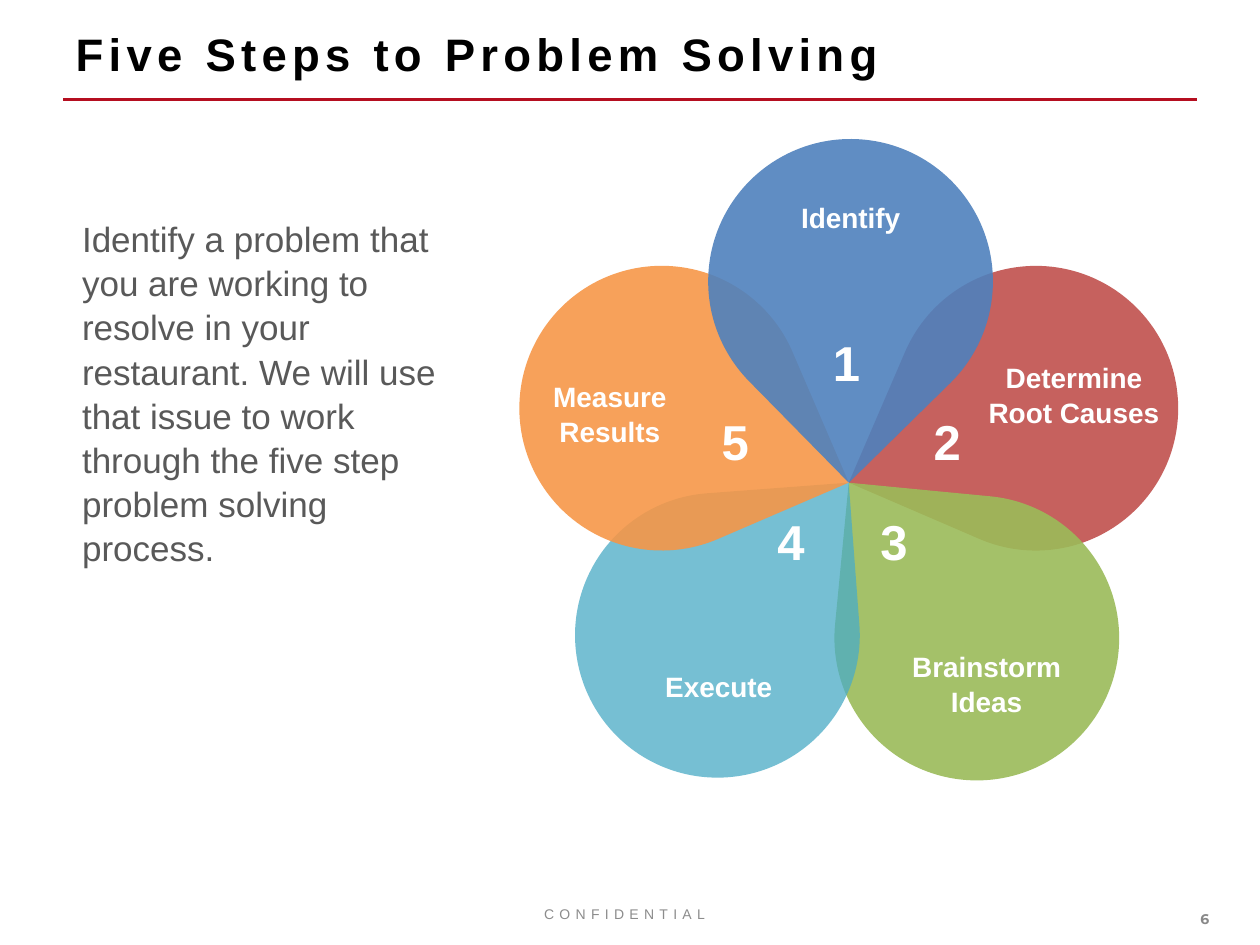
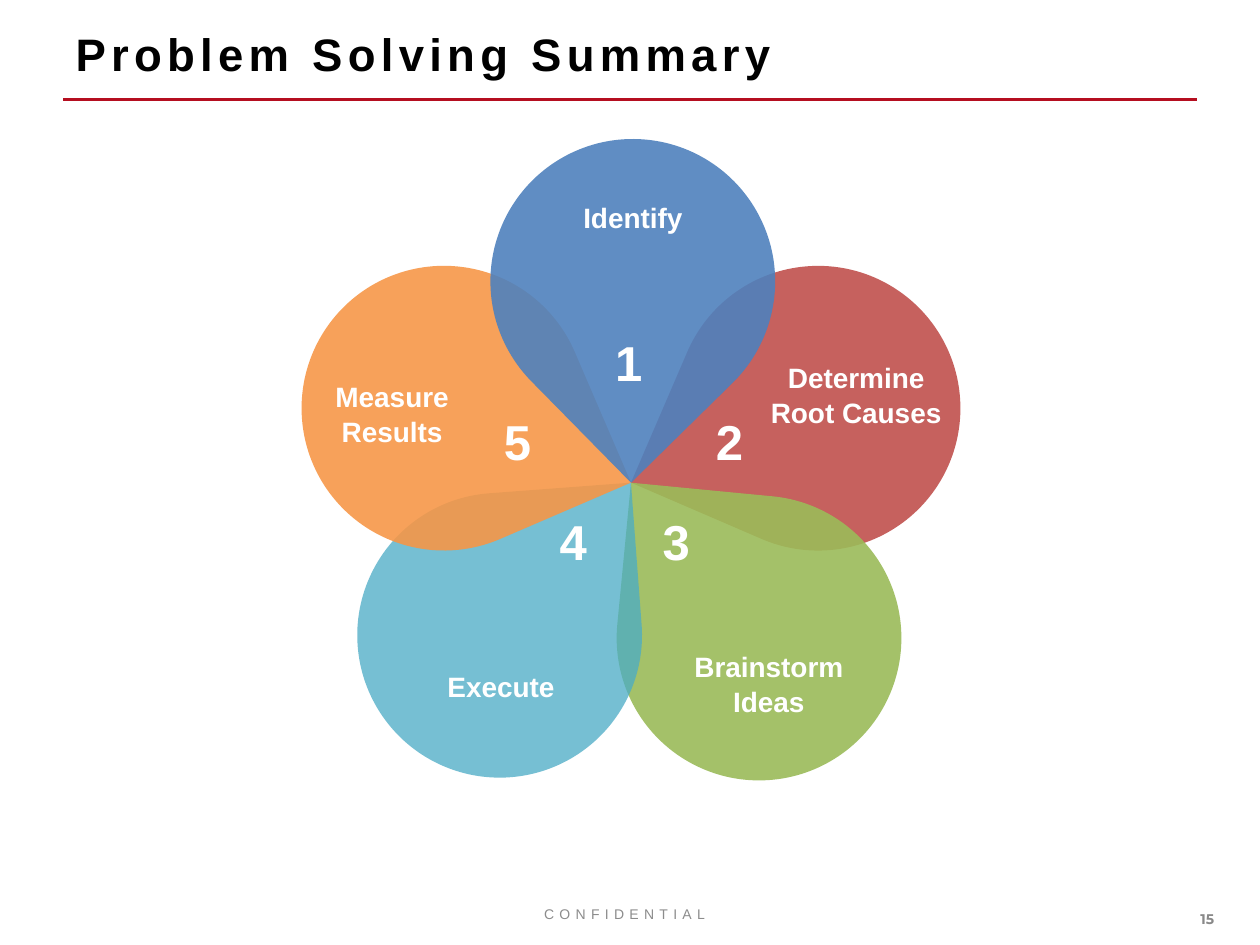
from dataclasses import dataclass
from math import cos, radians, sin, sqrt

from lxml.etree import SubElement
from pptx import Presentation
from pptx.dml.color import RGBColor
from pptx.enum.shapes import MSO_CONNECTOR, MSO_SHAPE
from pptx.enum.text import MSO_ANCHOR, MSO_AUTO_SIZE, PP_ALIGN
from pptx.oxml.ns import qn
from pptx.util import Cm, Pt


@dataclass(frozen=True)
class TextStyle:
    size: float
    color: str
    bold: bool = False
    font: str = "Arial"
    spacing: float = 0


@dataclass(frozen=True)
class Theme:
    title: TextStyle = TextStyle(26, "000000", bold=True, spacing=3)
    body: TextStyle = TextStyle(20, "595959")
    step: TextStyle = TextStyle(16, "FFFFFF", bold=True)
    number: TextStyle = TextStyle(28, "FFFFFF", bold=True)
    footer: TextStyle = TextStyle(8, "8C8C8C", spacing=3)
    page: TextStyle = TextStyle(8, "898989", bold=True, font="Montserrat")
    rule: str = "B50E20"
    rule_width: float = 2
    line_spacing: float = 1.05


@dataclass(frozen=True)
class Step:
    """One petal; places are centimetres from the flower's top left corner."""
    number: int
    name: str
    color: str
    opacity: int
    tip_angle: float  # clockwise from straight up
    name_box: tuple
    number_at: tuple


THEME = Theme()
TITLE_AND_BODY, TITLE_ONLY = 1, 5
HUB = (6.62, 6.91)
PETAL = 5.74
NUMBER_SIZE = (1.27, 1.45)
FLOWER_TOP = 2.82

# Listed from the rearmost petal to the foremost
STEPS = [
    Step(2, "Determine Root Causes", "C0504D", 90, 248.3,
         (9.19, 4.29, 3.94, 2.67), (8.08, 5.36)),
    Step(3, "Brainstorm Ideas", "9BBB59", 90, 320.5,
         (7.29, 10.11, 4.22, 1.93), (7.01, 7.37)),
    Step(4, "Execute", "4BACC6", 76, 40.7,
         (2.26, 10.52, 3.48, 1.12), (4.93, 7.37)),
    Step(5, "Measure Results", "F79646", 89, 111.7,
         (-0.05, 4.67, 3.71, 1.88), (3.81, 5.36)),
    Step(1, "Identify", "4F81BD", 90, 180.5,
         (5.11, 1.07, 3.1, 1.12), (6.05, 3.76)),
]


def write(frame, text, style, align=PP_ALIGN.LEFT, anchor=MSO_ANCHOR.TOP):
    frame.word_wrap = True
    frame.auto_size = MSO_AUTO_SIZE.NONE
    frame.vertical_anchor = anchor
    paragraph = frame.paragraphs[0]
    paragraph.alignment = align
    paragraph.space_before = Pt(0)
    run = paragraph.add_run()
    run.text = text
    run.font.name = style.font
    run.font.size = Pt(style.size)
    run.font.bold = style.bold
    run.font.color.rgb = RGBColor.from_string(style.color)
    if style.spacing:
        run.font._element.set("spc", str(round(style.spacing * 100)))
    return paragraph


def move(placeholder, left, top, width, height):
    placeholder.left, placeholder.top = Cm(left), Cm(top)
    placeholder.width, placeholder.height = Cm(width), Cm(height)


def add_text(shapes, box, text, style, **layout):
    frame = shapes.add_textbox(*map(Cm, box)).text_frame
    return frame, write(frame, text, style, **layout)


def add_header(slide, title, left=1.27, top=0.3, width=22.86):
    move(slide.shapes.title, left, top, width, 1.55)
    write(slide.shapes.title.text_frame, title, THEME.title, anchor=MSO_ANCHOR.MIDDLE)
    rule_y = Cm(top + 1.71)
    rule = slide.shapes.add_connector(
        MSO_CONNECTOR.STRAIGHT, Cm(left), rule_y, Cm(left + width), rule_y)
    rule.line.color.rgb = RGBColor.from_string(THEME.rule)
    rule.line.width = Pt(THEME.rule_width)
    SubElement(rule._element.spPr, qn("a:effectLst"))


def add_footer(slide, page, top=18.01):
    add_text(slide.shapes, (10.72, top, 3.94, 0.84), "CONFIDENTIAL",
             THEME.footer, anchor=MSO_ANCHOR.MIDDLE)
    add_text(slide.shapes, (23.95, top, 1.45, 1.02), str(page),
             THEME.page, anchor=MSO_ANCHOR.MIDDLE)


def add_body(slide, text, left, top, width, height):
    body = slide.placeholders[1]
    move(body, left, top, width, height)
    properties = body.text_frame.paragraphs[0]._p.get_or_add_pPr()
    properties.set("marL", "0")
    properties.set("indent", "0")
    SubElement(properties, qn("a:buNone"))
    paragraph = write(body.text_frame, text, THEME.body)
    paragraph.line_spacing = THEME.line_spacing


def add_petal(shapes, step, left, top):
    """Place a teardrop so that its tip touches the hub."""
    reach = PETAL / sqrt(2)
    angle = radians(step.tip_angle)
    center_x = left + HUB[0] - reach * sin(angle)
    center_y = top + HUB[1] + reach * cos(angle)
    petal = shapes.add_shape(
        MSO_SHAPE.TEAR, Cm(center_x - PETAL / 2), Cm(center_y - PETAL / 2),
        Cm(PETAL), Cm(PETAL))
    petal.rotation = (step.tip_angle - 45) % 360
    petal.shadow.inherit = False
    petal.line.fill.background()
    petal.fill.solid()
    petal.fill.fore_color.rgb = RGBColor.from_string(step.color)
    color = petal._element.spPr.find(qn("a:solidFill"))[0]
    SubElement(color, qn("a:alpha")).set("val", str(step.opacity * 1000))


def add_flower(slide, left, top):
    shapes = slide.shapes.add_group_shape().shapes
    for step in STEPS:
        add_petal(shapes, step, left, top)
    for step in STEPS:
        x, y, width, height = step.name_box
        frame, paragraph = add_text(
            shapes, (left + x, top + y, width, height), step.name,
            THEME.step, align=PP_ALIGN.CENTER)
        frame.margin_left = frame.margin_right = Cm(0.15)
        paragraph.line_spacing = THEME.line_spacing
        x, y = step.number_at
        add_text(shapes, (left + x, top + y, *NUMBER_SIZE),
                 str(step.number), THEME.number)


def add_page(deck, layout, title, page, flower_left):
    slide = deck.slides.add_slide(deck.slide_layouts[layout])
    add_header(slide, title)
    add_footer(slide, page)
    add_flower(slide, flower_left, FLOWER_TOP)
    return slide


def main():
    deck = Presentation()
    deck.slide_width, deck.slide_height = Cm(25.4), Cm(19.05)
    steps = add_page(deck, TITLE_AND_BODY, "Five Steps to Problem Solving", 6, 10.49)
    add_body(steps, "Identify a problem that you are working to resolve in your "
             "restaurant. We will use that issue to work through the five step "
             "problem solving process.", 1.4, 4.22, 8.15, 8.89)
    add_page(deck, TITLE_ONLY, "Problem Solving Summary", 15, 6.1)
    deck.save("out.pptx")


if __name__ == "__main__":
    main()
